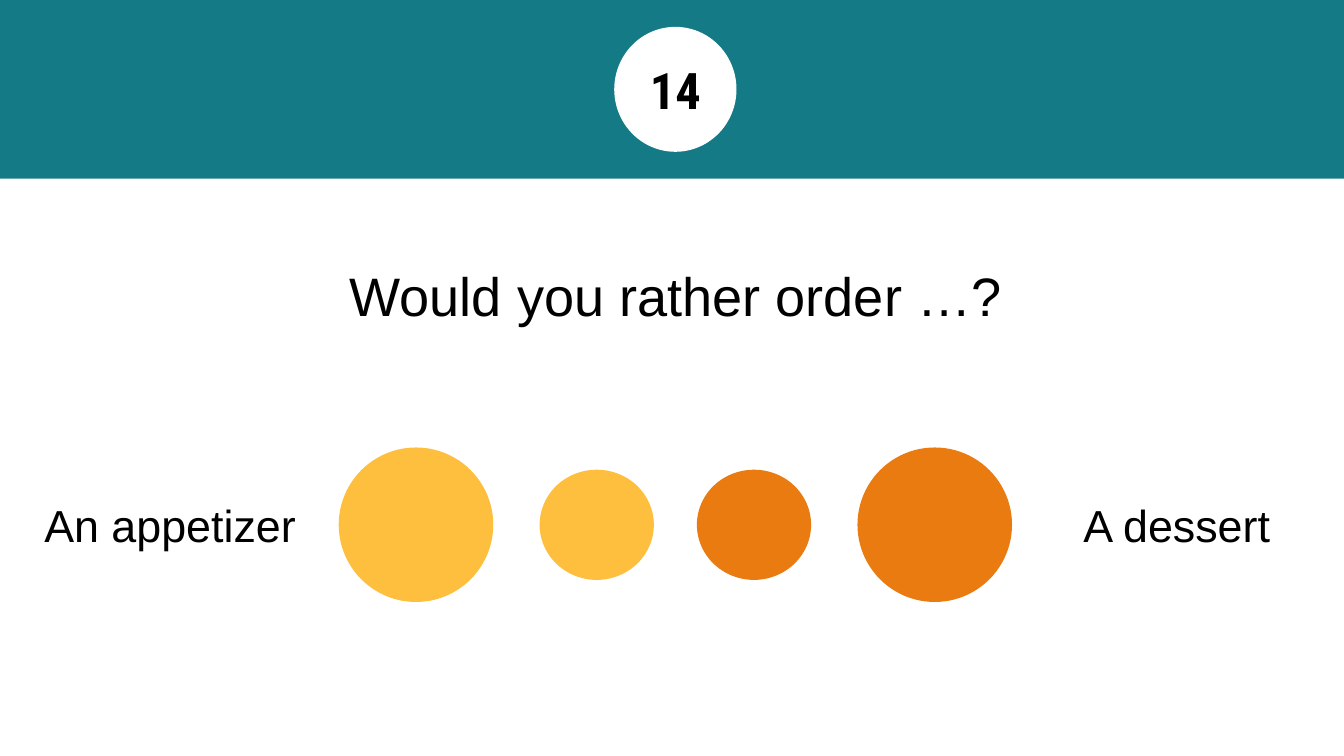
from dataclasses import dataclass

from pptx import Presentation
from pptx.dml.color import RGBColor
from pptx.enum.shapes import MSO_SHAPE
from pptx.enum.text import MSO_ANCHOR, PP_ALIGN
from pptx.util import Inches, Pt

WIDE, HIGH = Inches(10), Inches(5.625)
TEAL, WHITE, BLACK = "137A86", "FFFFFF", "000000"
AMBER, ORANGE = "FFBF3E", "E97B11"
MID, HEAD, ROW = 50.25, 11.82, 69.42


@dataclass
class Area:
    """A centred area in percent of the slide's width and height."""

    x: float
    y: float
    w: float
    h: float

    def box(self) -> tuple[int, int, int, int]:
        """Return left, top, width and height in EMU."""
        left, top = self.x - self.w / 2, self.y - self.h / 2
        return (int(WIDE * left / 100), int(HIGH * top / 100),
                int(WIDE * self.w / 100), int(HIGH * self.h / 100))


@dataclass
class Choice:
    """One side of the question, with its two dots."""

    text: str
    side: int
    x: float
    color: str


def paint(color: str) -> RGBColor:
    """Turn a hex string into a colour."""
    return RGBColor.from_string(color)


def draw(slide, kind: MSO_SHAPE, area: Area, color: str):
    """Draw a flat filled shape."""
    shape = slide.shapes.add_shape(kind, *area.box())
    shape.shadow.inherit = False
    shape.fill.solid()
    shape.fill.fore_color.rgb = paint(color)
    shape.line.fill.background()
    return shape


def write(shape, text: str, size: int, face: str = "Arial",
          bold: bool = False, anchor: MSO_ANCHOR = MSO_ANCHOR.MIDDLE) -> None:
    """Fill a shape with one centred line of black text."""
    frame = shape.text_frame
    frame.text = text
    frame.word_wrap = True
    frame.vertical_anchor = anchor
    frame.margin_left = frame.margin_right = Inches(0.1)
    frame.margin_top = frame.margin_bottom = Inches(0.1)
    line = frame.paragraphs[0]
    line.alignment = PP_ALIGN.CENTER
    line.font.name, line.font.size, line.font.bold = face, Pt(size), bold
    line.font.color.rgb = paint(BLACK)


def offer(slide, choice: Choice) -> None:
    """Draw a choice's label with its large and small dots."""
    for gap, w, h in ((19.3, 11.5, 20.44), (5.85, 8.5, 14.58)):
        spot = Area(MID + choice.side * gap, ROW, w, h)
        draw(slide, MSO_SHAPE.OVAL, spot, choice.color)
    label = slide.shapes.add_textbox(*Area(choice.x, ROW, 24.5, 11.2).box())
    write(label, choice.text, 24)


def main() -> None:
    """Build and save the slide."""
    deck = Presentation()
    deck.slide_width, deck.slide_height = WIDE, HIGH
    slide = deck.slides.add_slide(deck.slide_layouts[5])
    draw(slide, MSO_SHAPE.RECTANGLE, Area(50.15, HEAD, 100.3, 23.64), TEAL)
    badge = draw(slide, MSO_SHAPE.OVAL, Area(MID, HEAD, 9.1, 16.53), WHITE)
    write(badge, "14", 27, "Roboto Condensed", True)
    title = slide.shapes.title
    title.left, title.top, title.width, title.height = Area(
        50.3, 39.02, 93.2, 12.27).box()
    write(title, "Would you rather order …?", 29, anchor=MSO_ANCHOR.BOTTOM)
    for choice in (Choice("An appetizer", -1, 12.65, AMBER),
                   Choice("A dessert", 1, 87.55, ORANGE)):
        offer(slide, choice)
    deck.save("out.pptx")


if __name__ == "__main__":
    main()
